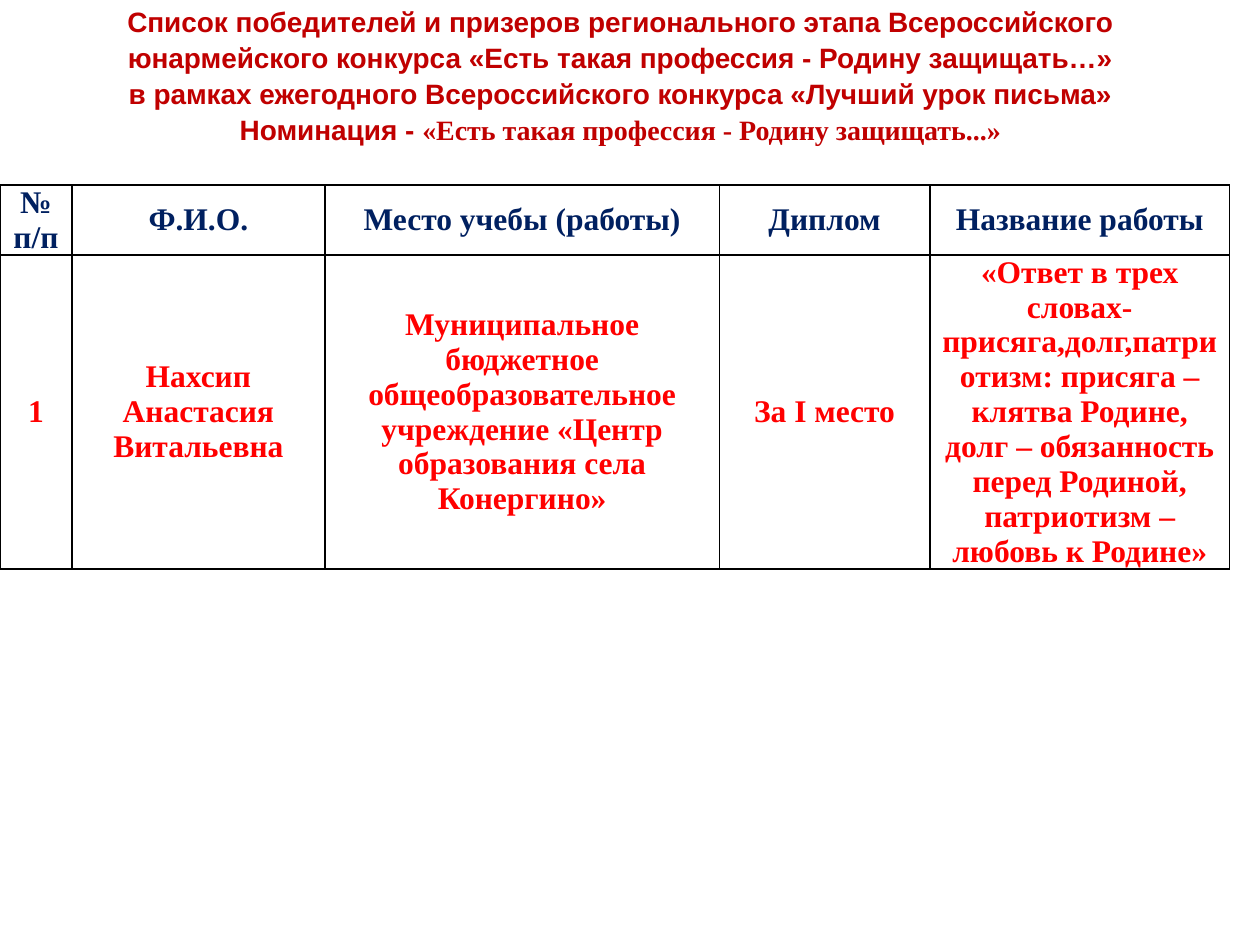
import pptx
import pptx.dml.color
import pptx.enum.text
import pptx.oxml
import pptx.oxml.ns
import pptx.util
from dataclasses import dataclass
from pptx.util import Inches


@dataclass(frozen=True)
class Theme:
    title_color: str = "C00000"
    header_color: str = "002060"
    entry_color: str = "FF0000"
    border_color: str = "000000"
    background: str = "FFFFFF"
    title_size: int = 16
    table_size: int = 18
    border_width: int = 1
    sans: str = "Arial"
    serif: str = "Times New Roman"


theme = Theme()


def format_paragraph(paragraph, font_name, size, color):
    paragraph.alignment = pptx.enum.text.PP_ALIGN.CENTER
    for run in paragraph.runs:
        run.font.name = font_name
        run.font.size = pptx.util.Pt(size)
        run.font.bold = True
        run.font.color.rgb = pptx.dml.color.RGBColor.from_string(color)


def draw_borders(cell):
    properties = cell._tc.get_or_add_tcPr()
    for position, side in enumerate(("lnL", "lnR", "lnT", "lnB")):
        border = pptx.oxml.parse_xml(
            f'<a:{side} {pptx.oxml.ns.nsdecls("a")} w="{pptx.util.Pt(theme.border_width)}">'
            f'<a:solidFill><a:srgbClr val="{theme.border_color}"/></a:solidFill></a:{side}>'
        )
        properties.insert(position, border)


presentation = pptx.Presentation()
presentation.slide_width = Inches(10)
presentation.slide_height = Inches(7.5)
slide = presentation.slides.add_slide(presentation.slide_layouts[5])

heading = slide.shapes.title
heading.left, heading.top = Inches(0.16), Inches(0)
heading.width, heading.height = Inches(9.53), Inches(1.18)
heading.fill.solid()
heading.fill.fore_color.rgb = pptx.dml.color.RGBColor.from_string(theme.background)
heading_text = heading.text_frame
heading_text.word_wrap = True
heading_text.auto_size = pptx.enum.text.MSO_AUTO_SIZE.NONE
heading_text.vertical_anchor = pptx.enum.text.MSO_ANCHOR.MIDDLE
heading_text.text = "\n".join([
    "Список победителей и призеров регионального этапа Всероссийского "
    "юнармейского конкурса «Есть такая профессия - Родину защищать…»",
    "в рамках ежегодного Всероссийского конкурса «Лучший урок письма»",
    "Номинация - ",
])
nomination = heading_text.paragraphs[-1].add_run()
nomination.text = "«Есть такая профессия - Родину защищать...»"
for paragraph in heading_text.paragraphs:
    paragraph.line_spacing = 1.07
    paragraph.space_before = pptx.util.Pt(0)
    format_paragraph(paragraph, theme.sans, theme.title_size, theme.title_color)
nomination.font.name = theme.serif

column_widths = [0.57, 2.01, 3.13, 1.67, 2.38]
row_heights = [0.55, 2.49]
row_colors = [theme.header_color, theme.entry_color]
entries = [
    ["№\nп/п", "Ф.И.О.", "Место учебы (работы)", "Диплом", "Название работы"],
    [
        "1",
        "Нахсип Анастасия Витальевна",
        "Муниципальное бюджетное общеобразовательное учреждение "
        "«Центр образования села Конергино»",
        "За I место",
        "«Ответ в трех словах- присяга,долг,патриотизм: присяга – клятва Родине, "
        "долг – обязанность перед Родиной,\nпатриотизм – любовь к Родине»",
    ],
]

winners = slide.shapes.add_table(
    len(entries), len(column_widths), Inches(0), Inches(1.47),
    Inches(sum(column_widths)), Inches(sum(row_heights)),
).table
winners.first_row = False
winners.horz_banding = False
for column, width in zip(winners.columns, column_widths):
    column.width = Inches(width)
for row, height, color, texts in zip(winners.rows, row_heights, row_colors, entries):
    row.height = Inches(height)
    for cell, text in zip(row.cells, texts):
        cell.fill.background()
        cell.vertical_anchor = pptx.enum.text.MSO_ANCHOR.MIDDLE
        cell.margin_left = cell.margin_right = Inches(0.07)
        cell.margin_top = cell.margin_bottom = Inches(0)
        cell.text_frame.text = text
        for paragraph in cell.text_frame.paragraphs:
            format_paragraph(paragraph, theme.serif, theme.table_size, color)
        draw_borders(cell)

presentation.save("out.pptx")
